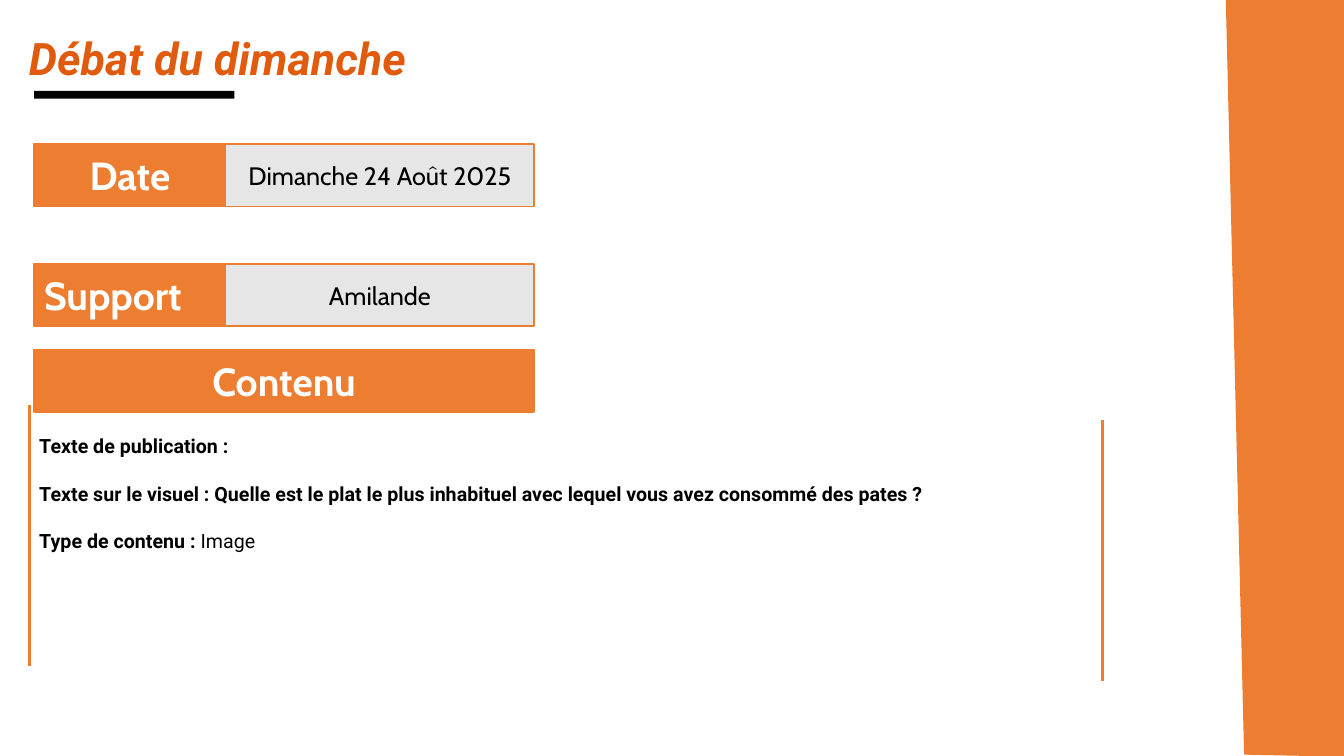
from pptx import Presentation
from pptx.dml.color import RGBColor
from pptx.enum.shapes import MSO_CONNECTOR, MSO_SHAPE
from pptx.enum.text import MSO_ANCHOR, PP_ALIGN
from pptx.oxml.ns import qn
from pptx.util import Cm, Pt
from lxml import etree

COLORS = {
    "orange": "ED7D31",
    "title": "E15B0F",
    "grey": "E7E6E6",
    "black": "000000",
    "white": "FFFFFF",
}


def paint(shape, fill, line=None):
    shape.shadow.inherit = False
    shape.fill.solid()
    shape.fill.fore_color.rgb = RGBColor.from_string(COLORS[fill])
    if line:
        shape.line.color.rgb = RGBColor.from_string(COLORS[line])
        shape.line.width = Pt(1)
    else:
        shape.line.fill.background()


def style(paragraph, font_name, size, color, bold, align=PP_ALIGN.LEFT):
    paragraph.alignment = align
    paragraph.font.name = font_name
    paragraph.font.size = Pt(size)
    paragraph.font.bold = bold
    paragraph.font.color.rgb = RGBColor.from_string(COLORS[color])


presentation = Presentation()
presentation.slide_width = Cm(33.87)
presentation.slide_height = Cm(19.05)
slide = presentation.slides.add_slide(presentation.slide_layouts[6])
shapes = slide.shapes

# Slanted band on the right
builder = shapes.build_freeform(Cm(30.91), 0)
builder.add_line_segments(
    [(Cm(33.87), 0), (Cm(33.88), Cm(19.05)), (Cm(31.37), Cm(19))], close=True
)
paint(builder.convert_to_shape(), "orange", "orange")

# Bar under the title
paint(shapes.add_shape(MSO_SHAPE.RECTANGLE, Cm(0.86), Cm(2.29), Cm(5.05), Cm(0.2)), "black")

# Vertical rules beside the content
for left, top in [(0.74, 10.21), (27.79, 10.59)]:
    rule = shapes.add_connector(
        MSO_CONNECTOR.STRAIGHT, Cm(left), Cm(top), Cm(left), Cm(top + 6.58)
    )
    rule.line.color.rgb = RGBColor.from_string(COLORS["orange"])
    rule.line.width = Pt(2.25)
    etree.SubElement(rule._element.spPr, qn("a:effectLst"))

# Labels and their values
LABEL_LEFT, LABEL_WIDTH, VALUE_WIDTH = 0.86, 4.83, 7.77
VALUE_LEFT = LABEL_LEFT + LABEL_WIDTH
boxes = [
    ("Date", LABEL_LEFT, 3.63, LABEL_WIDTH, True, PP_ALIGN.CENTER),
    ("Dimanche 24 Août 2025", VALUE_LEFT, 3.63, VALUE_WIDTH, False, PP_ALIGN.CENTER),
    ("Support", LABEL_LEFT, 6.65, LABEL_WIDTH, True, PP_ALIGN.LEFT),
    ("Amilande", VALUE_LEFT, 6.65, VALUE_WIDTH, False, PP_ALIGN.CENTER),
    ("Contenu", LABEL_LEFT, 8.81, LABEL_WIDTH + VALUE_WIDTH, True, PP_ALIGN.CENTER),
]
for text, left, top, width, is_label, align in boxes:
    box = shapes.add_shape(MSO_SHAPE.RECTANGLE, Cm(left), Cm(top), Cm(width), Cm(1.57))
    paint(box, "orange" if is_label else "grey", "orange")
    box.text_frame.vertical_anchor = MSO_ANCHOR.MIDDLE
    paragraph = box.text_frame.paragraphs[0]
    paragraph.text = text
    size, color = (28, "white") if is_label else (18, "black")
    style(paragraph, "Cabin", size, color, is_label, align)

# Content description
content = shapes.add_textbox(Cm(0.74), Cm(10.82), Cm(27.48), Cm(3.25)).text_frame
content.word_wrap = True
lines = [
    ("Texte de publication :", ""),
    (
        "Texte sur le visuel : Quelle est le plat le plus inhabituel "
        "avec lequel vous avez consommé des pates ?",
        "",
    ),
    ("Type de contenu : ", "Image"),
]
for index, (heading, detail) in enumerate(lines):
    paragraph = content.add_paragraph() if index else content.paragraphs[0]
    paragraph.add_run().text = heading
    style(paragraph, "Roboto", 14, "black", True)
    if index:
        paragraph.space_before = Pt(17)
    if detail:
        run = paragraph.add_run()
        run.text = detail
        run.font.bold = False

# Title
title = shapes.add_textbox(Cm(0.48), Cm(0.64), Cm(28.02), Cm(1.32)).text_frame
title.word_wrap = True
paragraph = title.paragraphs[0]
paragraph.text = "Débat du dimanche"
style(paragraph, "Roboto", 32, "title", True, PP_ALIGN.JUSTIFY)
paragraph.font.italic = True

presentation.save("out.pptx")
